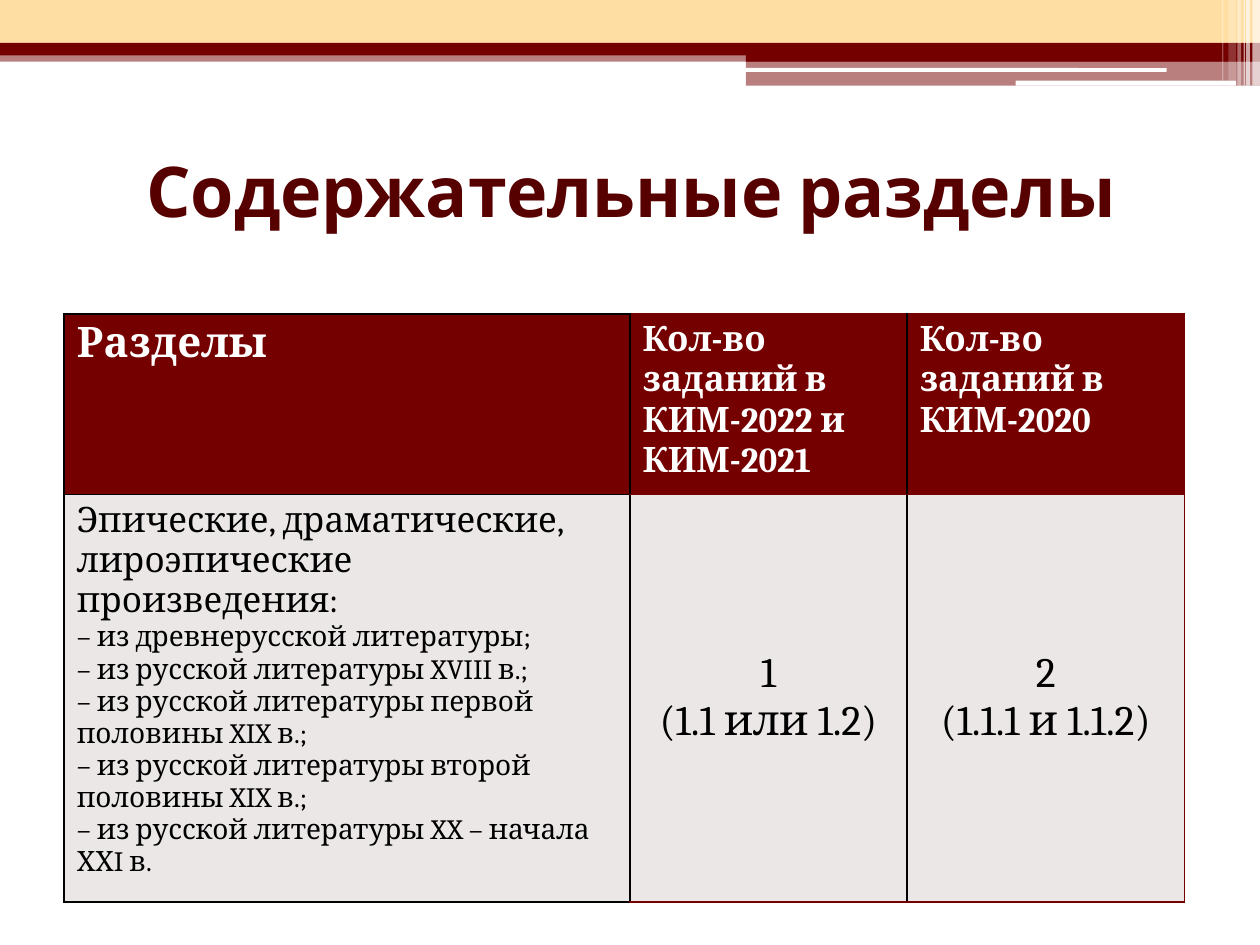
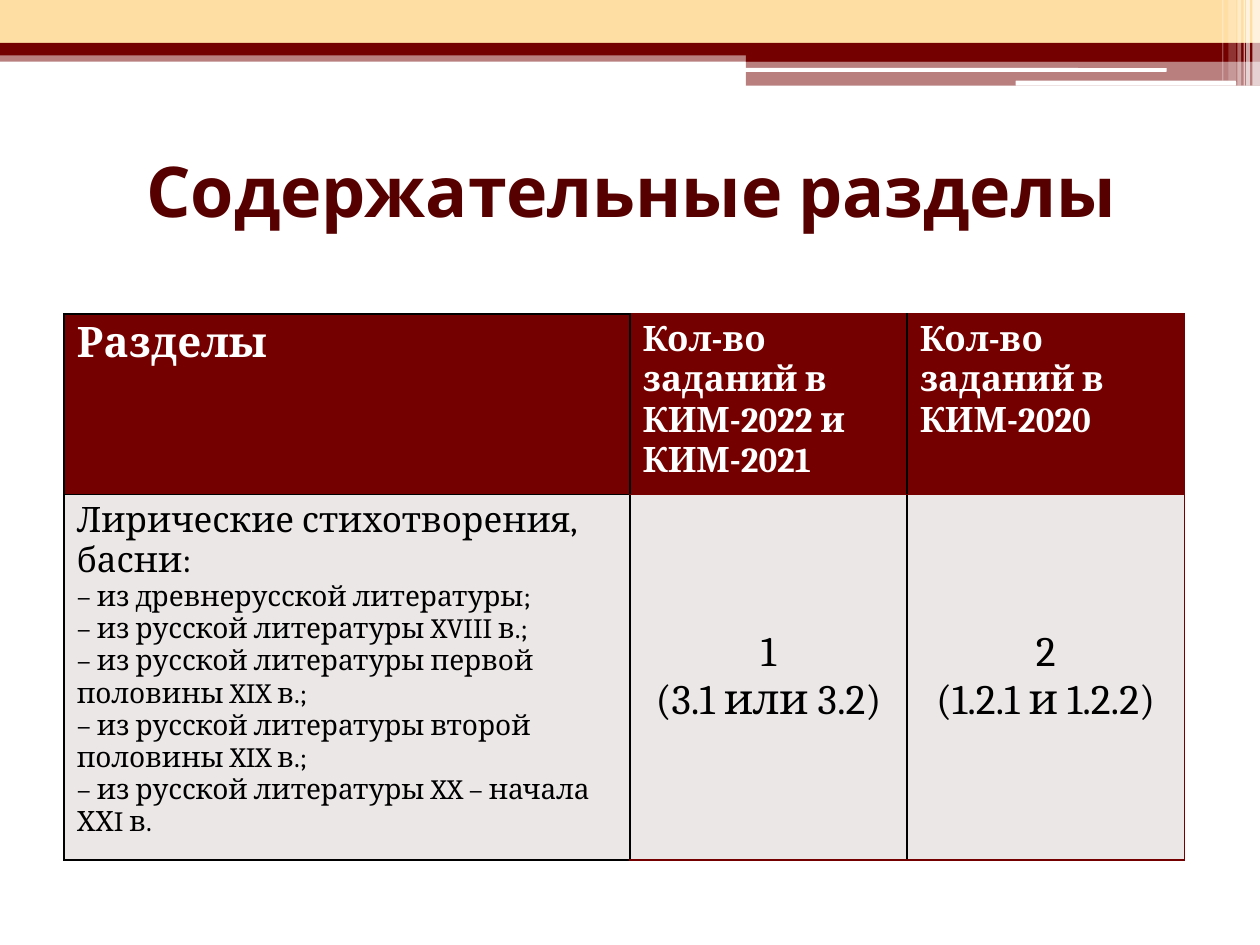
from lxml.etree import SubElement as add_child
from pptx import Presentation
from pptx.dml.color import RGBColor
from pptx.enum.shapes import MSO_SHAPE as Shape
from pptx.enum.text import MSO_ANCHOR as Anchor, PP_ALIGN as Align
from pptx.oxml import parse_xml
from pptx.oxml.ns import nsdecls, qn
from pptx.util import Pt

SCALE = 9144  # EMU per px, 100 px to the inch
DARK_RED, CREAM, TITLE_RED = "740000", "FFDEA4", "570000"
WHITE, BLACK, CELL_GREY = "FFFFFF", "000000", "EBE7E7"
TITLE_FONT, TABLE_FONT = "Cabin", "Cambria"

# Header bands: left, top, width, height, colour, opacity in percent
BANDS = [
    (0, 40, 1000, 9, DARK_RED, 50),
    (0, 0, 1000, 34, CREAM, 100),
    (0, 34, 1000, 10, DARK_RED, 100),
    (592, 39, 408, 10, DARK_RED, 100),
    (592, 48, 408, 20, DARK_RED, 50),
]
WHITE_BARS = [(591, 54, 335, 3), (806, 64, 175, 4)]
# Corner stripes: left, width, height, opacity in percent
STRIPES = [(994, 6, 68, 65), (989, 3, 68, 65), (987, 1, 68, 60),
           (982, 3, 68, 40), (975, 6, 64, 20), (970, 1, 64, 30)]

# Table content
COLUMNS = [449, 220, 220]
HEADER_HEIGHT = 137
HEADINGS = [["Разделы"],
            ["Кол-во", "заданий в КИМ-2022 и КИМ-2021"],
            ["Кол-во заданий в КИМ-2020"]]
PERIODS = [
    "– из древнерусской литературы;",
    "– из русской литературы XVIII в.;",
    "– из русской литературы первой половины XIX в.;",
    "– из русской литературы второй половины XIX в.;",
    "– из русской литературы XX – начала ХХI в.",
]
# Body height, kind of works, tasks in 2022 and 2021, tasks in 2020
SECTIONS = [
    (309, "Эпические, драматические, лироэпические произведения:",
     ["1", "(1.1 или 1.2)"], ["2", "(1.1.1 и 1.1.2)"]),
    (277, "Лирические стихотворения, басни:",
     ["1", "(3.1 или 3.2)"], ["2", "(1.2.1 и 1.2.2)"]),
]


def px(*lengths):
    return [length * SCALE for length in lengths]


def color(code):
    return RGBColor.from_string(code)


def add_block(page, bounds, fill, opacity=100, kind=Shape.RECTANGLE):
    block = page.shapes.add_shape(kind, *px(*bounds))
    block.shadow.inherit = False
    block.fill.solid()
    block.fill.fore_color.rgb = color(fill)
    block.line.fill.background()
    if opacity < 100:
        tint = block.fill._xPr.find(qn("a:solidFill"))[0]
        add_child(tint, qn("a:alpha"), val=str(opacity * 1000))


def write(frame, text, size=20, font=TABLE_FONT, ink=BLACK, bold=False,
          align=Align.LEFT):
    """Fill the first paragraph, or append one when it is already used."""
    para = frame.paragraphs[0]
    if para.runs:
        para = frame.add_paragraph()
    para.alignment = align
    span = para.add_run()
    span.text = text
    span.font.size = Pt(size)
    span.font.name = font
    span.font.bold = bold
    span.font.color.rgb = color(ink)


def add_bands(page):
    for *bounds, fill, opacity in BANDS:
        add_block(page, bounds, fill, opacity)
    for bounds in WHITE_BARS:
        add_block(page, bounds, WHITE, kind=Shape.ROUNDED_RECTANGLE)
    for left, width, height, opacity in STRIPES:
        add_block(page, (left, 0, width, height), WHITE, opacity)


def add_title(page, text):
    box = page.shapes.add_textbox(*px(51, 92, 900, 117))
    frame = box.text_frame
    frame.word_wrap = True
    frame.vertical_anchor = Anchor.MIDDLE
    write(frame, text, size=40, font=TITLE_FONT, ink=TITLE_RED, bold=True,
          align=Align.CENTER)


def style_cell(cell, column, fill):
    cell.fill.solid()
    cell.fill.fore_color.rgb = color(fill)
    # The first column is framed in black, the others in red outside
    level = BLACK if column == 0 else DARK_RED
    right = DARK_RED if column == len(COLUMNS) - 1 else BLACK
    sides = {"lnL": BLACK, "lnR": right, "lnT": level, "lnB": level}
    properties = cell._tc.get_or_add_tcPr()
    for place, (side, ink) in enumerate(sides.items()):
        properties.insert(place, parse_xml(
            f'<a:{side} {nsdecls("a")} w="12700"><a:solidFill>'
            f'<a:srgbClr val="{ink}"/></a:solidFill></a:{side}>'))


def add_section_table(page, body_height, works, *task_counts):
    heights = [HEADER_HEIGHT, body_height]
    holder = page.shapes.add_table(
        2, 3, *px(51, 249, sum(COLUMNS), sum(heights)))
    table = holder.table
    table.first_row = table.horz_banding = False
    for column, width in zip(table.columns, px(*COLUMNS)):
        column.width = width
    for row, height in zip(table.rows, px(*heights)):
        row.height = height

    # Header row
    for column, lines in enumerate(HEADINGS):
        cell = table.cell(0, column)
        style_cell(cell, column, DARK_RED)
        for line in lines:
            write(cell.text_frame, line, size=20 if column else 24,
                  ink=WHITE, bold=True)

    # Works and periods
    cell = table.cell(1, 0)
    style_cell(cell, 0, CELL_GREY)
    write(cell.text_frame, works)
    for period in PERIODS:
        write(cell.text_frame, period, size=16)

    # Task counts
    for column, lines in enumerate(task_counts, start=1):
        cell = table.cell(1, column)
        style_cell(cell, column, CELL_GREY)
        cell.vertical_anchor = Anchor.MIDDLE
        for line in lines:
            write(cell.text_frame, line, size=24, align=Align.CENTER)


def main():
    deck = Presentation()
    deck.slide_width, deck.slide_height = px(1000, 750)
    for section in SECTIONS:
        page = deck.slides.add_slide(deck.slide_layouts[6])
        add_bands(page)
        add_title(page, "Содержательные разделы")
        add_section_table(page, *section)
    deck.save("out.pptx")


if __name__ == "__main__":
    main()
